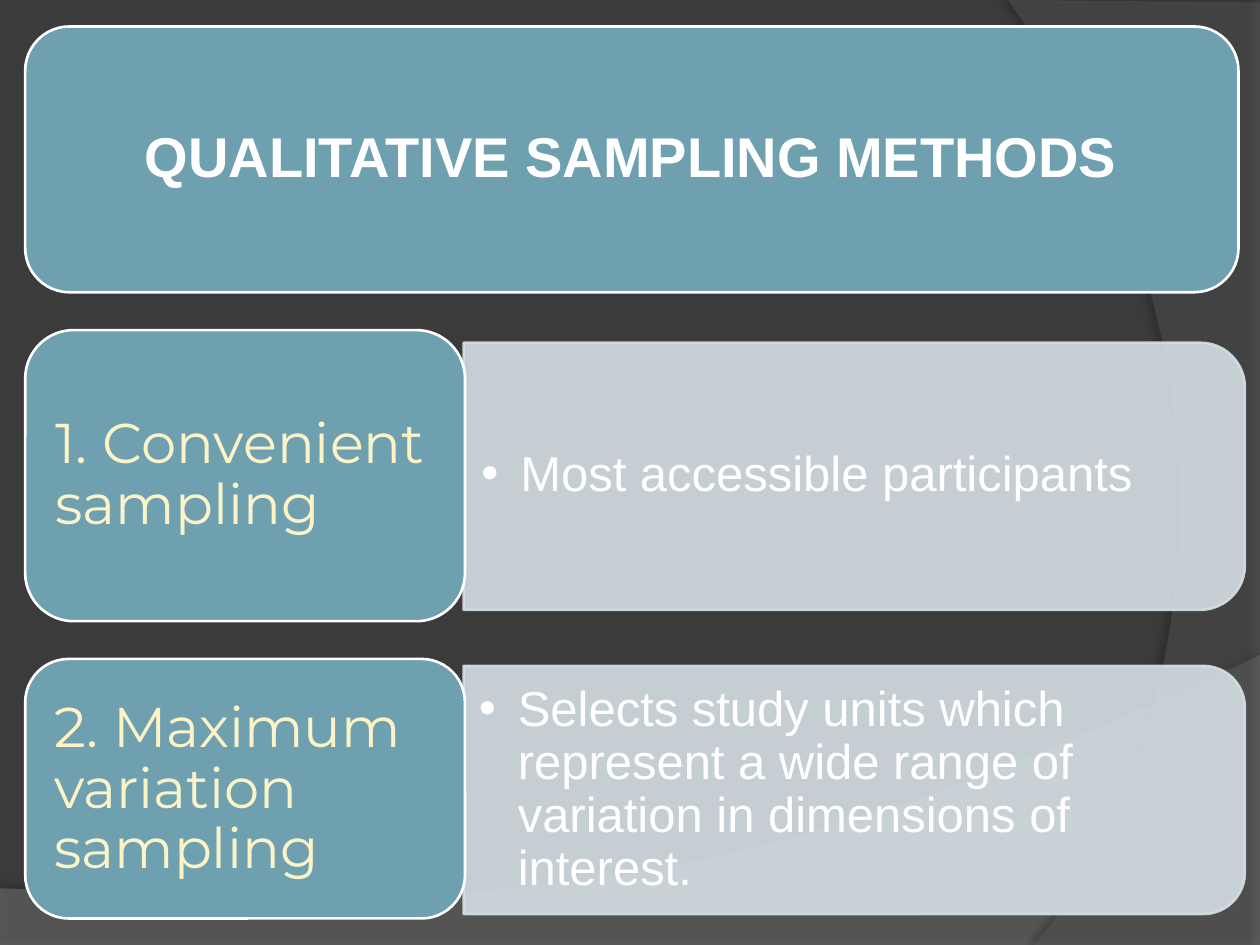
from lxml.etree import SubElement
from pptx import Presentation
from pptx.dml.color import RGBColor
from pptx.enum.shapes import MSO_SHAPE
from pptx.enum.text import MSO_ANCHOR, MSO_AUTO_SIZE, PP_ALIGN
from pptx.oxml.ns import qn
from pptx.util import Inches, Pt

COLUMNS, ROWS = 100, 75
CURVE_STEPS = 40
COMPARISON_LAYOUT = 4

BACKGROUND = RGBColor(0x3B, 0x3B, 0x3B)
LOW_WAVE = RGBColor(0x7F, 0x7F, 0x7F)
SIDE_WAVE = RGBColor(0x5E, 0x5E, 0x5E)
TEAL = RGBColor(0x6E, 0xA0, 0xB0)
PALE = RGBColor(0xD5, 0xDF, 0xE4)
WHITE = RGBColor(0xFF, 0xFF, 0xFF)
CREAM = RGBColor(0xFC, 0xF4, 0xC7)

TITLE_FONT = {"name": "Arial", "size": Pt(32), "bold": True}
HEADING_FONT = {"name": "Montserrat", "size": Pt(32), "bold": False}
LIST_FONT = {"name": "Arial", "size": Pt(28), "bold": False}

# Heading, its tile and text boxes; list item, its panel and text boxes, list inset
METHODS = [
    ("1. Convenient sampling", (2, 26.2, 34.9, 23.1), (3.1, 27.3, 32.6, 20.9),
     "Most accessible participants",
     (36.8, 27.2, 62, 21.2), (36.8, 28.2, 61, 19.1), 0.14),
    ("2. Maximum variation sampling", (2, 52.3, 34.9, 20.6), (3, 53.4, 32.9, 18.6),
     "Selects study units which represent a wide range of variation "
     "in dimensions of interest.",
     (36.8, 52.85, 62, 19.7), (36.8, 53.8, 61, 17.8), 0.12),
]


def set_attributes(target, values):
    for name, value in values.items():
        setattr(target, name, value)


def set_opacity(fill_parent, percent):
    color = next(fill_parent.iter(qn("a:srgbClr")))
    SubElement(color, qn("a:alpha"), val=str(percent * 1000))


def bezier(start, control_1, control_2, end):
    """Points along a cubic curve, without its start."""
    points = []
    for step in range(1, CURVE_STEPS + 1):
        t = step / CURVE_STEPS
        weights = ((1 - t) ** 3, 3 * t * (1 - t) ** 2, 3 * t * t * (1 - t), t ** 3)
        corners = (start, control_1, control_2, end)
        points.append(tuple(sum(w * corner[axis] for w, corner in zip(weights, corners))
                            for axis in (0, 1)))
    return points


class SlideBuilder:
    """Places elements by (left, top, width, height) in grid columns and rows."""

    def __init__(self, presentation):
        self.column = presentation.slide_width / COLUMNS
        self.row = presentation.slide_height / ROWS
        layout = presentation.slide_layouts[COMPARISON_LAYOUT]
        self.slide = presentation.slides.add_slide(layout)
        fill = self.slide.background.fill
        fill.solid()
        fill.fore_color.rgb = BACKGROUND

    def frame(self, box):
        left, top, width, height = box
        return (round(left * self.column), round(top * self.row),
                round(width * self.column), round(height * self.row))

    def paint(self, shape, color, line_color=None, opacity=100):
        shape.shadow.inherit = False
        shape.fill.solid()
        shape.fill.fore_color.rgb = color
        properties = shape._element.spPr
        if opacity < 100:
            set_opacity(properties, opacity)
        if line_color is None:
            shape.line.fill.background()
            return
        shape.line.color.rgb = line_color
        shape.line.width = Pt(1.5)
        if opacity < 100:
            set_opacity(properties.find(qn("a:ln")), opacity)

    def wave(self, points, color, opacity, shadow_opacity, distance, direction):
        scaled = [(round(x * self.column), round(y * self.row)) for x, y in points]
        builder = self.slide.shapes.build_freeform(*scaled[0])
        builder.add_line_segments(scaled[1:], close=True)
        shape = builder.convert_to_shape()
        self.paint(shape, color, opacity=opacity)
        effects = shape._element.spPr.find(qn("a:effectLst"))
        shadow = SubElement(effects, qn("a:outerShdw"), blurRad=str(Pt(4)),
                            dist=str(Pt(distance)), dir=str(direction * 60000),
                            algn="ctr", rotWithShape="0")
        SubElement(shadow, qn("a:srgbClr"), val="000000")
        set_opacity(shadow, shadow_opacity)

    def tile(self, box):
        shape = self.slide.shapes.add_shape(MSO_SHAPE.ROUNDED_RECTANGLE, *self.frame(box))
        self.paint(shape, TEAL, WHITE)

    def panel(self, box):
        """Box with its two right corners rounded: a top-rounded one turned by 90 degrees."""
        left, top, width, height = self.frame(box)
        shift = (width - height) // 2
        shape = self.slide.shapes.add_shape(
            MSO_SHAPE.ROUND_2_SAME_RECTANGLE, left + shift, top - shift, height, width)
        shape.rotation = 90
        self.paint(shape, PALE, PALE, opacity=90)

    def text(self, index, box, words, font, color, align=PP_ALIGN.LEFT,
             inset=0.13, indent=0):
        """Fills a placeholder and brings it in front of the shapes drawn so far."""
        holder = self.slide.placeholders[index]
        names = ("left", "top", "width", "height")
        set_attributes(holder, dict(zip(names, self.frame(box))))
        self.slide.shapes._spTree.append(holder._element)
        frame = holder.text_frame
        frame.text = words
        side, edge = Inches(inset), Inches(inset / 2)
        set_attributes(frame, {
            "word_wrap": True, "auto_size": MSO_AUTO_SIZE.NONE,
            "vertical_anchor": MSO_ANCHOR.MIDDLE,
            "margin_left": side, "margin_right": side,
            "margin_top": edge, "margin_bottom": edge})
        paragraph = frame.paragraphs[0]
        set_attributes(paragraph, {
            "alignment": align, "line_spacing": 0.9, "space_before": Pt(0)})
        properties = paragraph._p.get_or_add_pPr()
        properties.set("marL", str(Inches(indent)))
        properties.set("indent", str(-Inches(indent)))
        run_font = paragraph.runs[0].font
        set_attributes(run_font, font)
        run_font.color.rgb = color


def main():
    presentation = Presentation()
    presentation.slide_width, presentation.slide_height = Inches(10), Inches(7.5)
    builder = SlideBuilder(presentation)

    low_curve = bezier((100, 52), (55.9, 72.9), (39.1, 71.9), (0, 70.5))
    builder.wave([(0, 70.5), (0, 75), (100, 75)] + [(100, 52)] + low_curve[:-1],
                 LOW_WAVE, 45, 35, 3.5, 270)
    side_curve = bezier((82.1, 75), (93.5, 61.9), (101.8, 30), (80, 0))
    builder.wave([(100, 0.2), (100, 75), (82.1, 75)] + side_curve,
                 SIDE_WAVE, 40, 45, 4, 180)

    builder.tile((2, 2.1, 96.3, 21.1))
    builder.text(0, (3, 3.1, 94.2, 19.1), "QUALITATIVE SAMPLING METHODS",
                 TITLE_FONT, WHITE, PP_ALIGN.CENTER)

    for number, method in enumerate(METHODS):
        heading, tile, heading_box, item, panel, item_box, inset = method
        index = 1 + 2 * number
        builder.panel(panel)
        builder.text(index + 1, item_box, item, LIST_FONT, WHITE,
                     inset=inset, indent=0.31)
        builder.tile(tile)
        builder.text(index, heading_box, heading, HEADING_FONT, CREAM)

    presentation.save("out.pptx")


if __name__ == "__main__":
    main()
